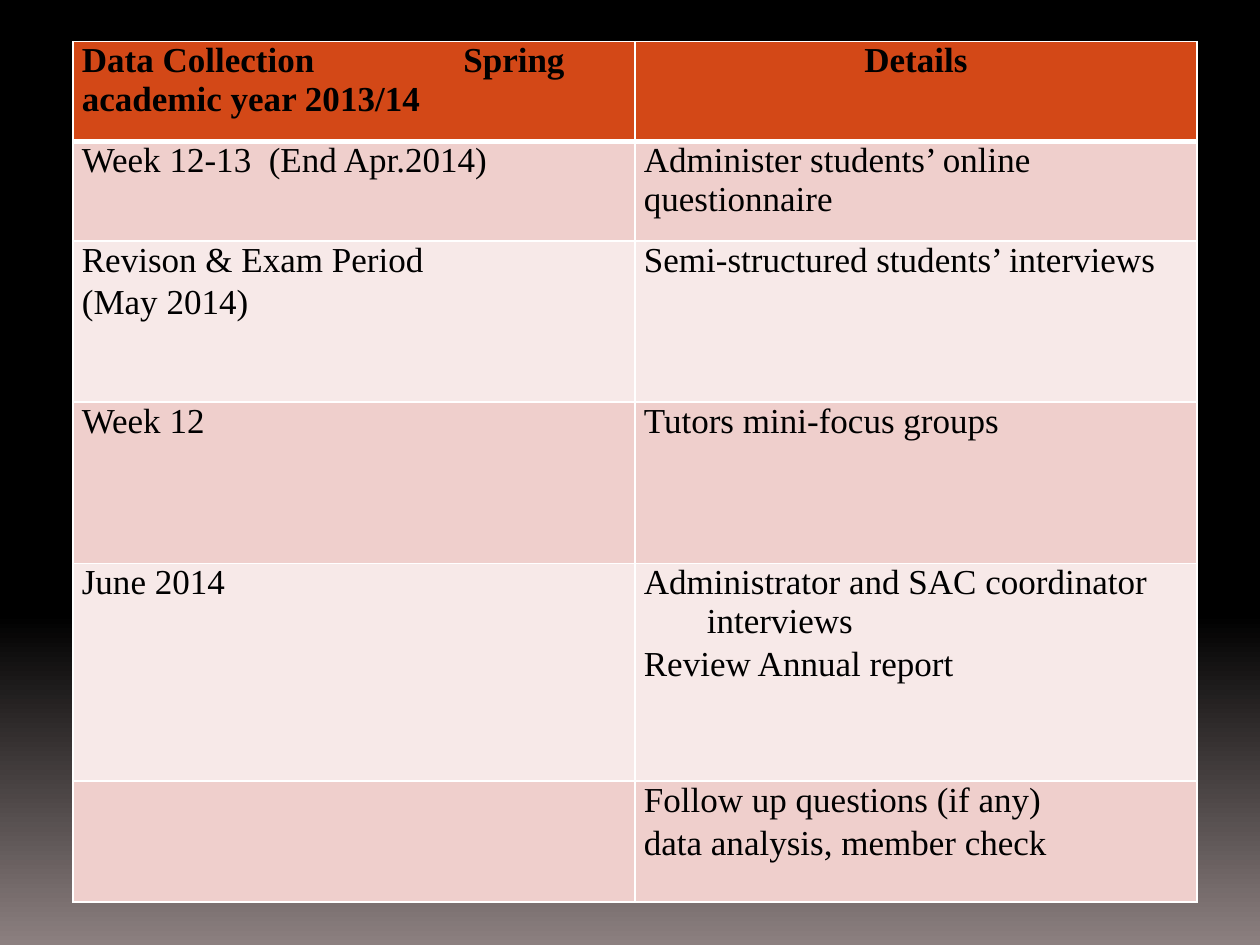
from copy import deepcopy
from dataclasses import dataclass
from lxml.etree import SubElement as Sub
from pptx import Presentation
from pptx.dml.color import RGBColor as RGB
from pptx.enum.text import PP_ALIGN as Align
from pptx.oxml.ns import qn
from pptx.util import Cm, Pt


@dataclass
class Theme:
    font: str = "Times New Roman"
    size: float = 20
    after: float = 2.1
    ink: str = "000000"
    head: str = "D34817"
    bands: tuple = ("EFCFCC", "F7E9E8")
    rule: str = "FFFFFF"
    thin: float = 1
    thick: float = 3
    back: tuple = ((0, "000000"), (0.65, "000000"), (1, "8C8080"))


theme = Theme()


def write(cell, text, bold=False, align=Align.LEFT, hang=0, tab=0):
    """Fill a cell; hang indents the first paragraph, tab sets its stop."""
    frame = cell.text_frame
    for n, line in enumerate(text.split("\n")):
        para = frame.add_paragraph() if n else frame.paragraphs[0]
        para.alignment = align
        para.space_after = Pt(theme.after)
        props = para._p.get_or_add_pPr()
        if hang and n == 0:
            props.set("marL", str(Cm(hang)))
            props.set("indent", str(-Cm(hang)))
        if tab:
            stops = Sub(props, qn("a:tabLst"))
            Sub(stops, qn("a:tab"), pos=str(Cm(tab)), algn="l")
        run = para.add_run()
        run.text = line
        font = run.font
        font.name, font.size, font.bold = theme.font, Pt(theme.size), bold
        font.color.rgb = RGB.from_string(theme.ink)


def edge(cell, side, width):
    """Draw one border of a cell."""
    line = Sub(cell._tc.get_or_add_tcPr(), qn(f"a:ln{side}"), w=str(Pt(width)))
    fill = Sub(line, qn("a:solidFill"))
    Sub(fill, qn("a:srgbClr"), val=theme.rule)


# Slide
deck = Presentation()
deck.slide_width, deck.slide_height = Cm(25.4), Cm(19.05)
slide = deck.slides.add_slide(deck.slide_layouts[6])

# Background, fading downwards
fill = slide.background.fill
fill.gradient()
fill.gradient_angle = 270
stops = next(slide._element.iter(qn("a:gsLst")))
stops.insert(0, deepcopy(stops[0]))
for stop, (place, tone) in zip(fill.gradient_stops, theme.back):
    stop.position = place
    stop.color.rgb = RGB.from_string(tone)

# Schedule: row height, period, details
rows = [
    (2.01, "Data Collection\tSpring academic year 2013/14", "Details"),
    (2.01, "Week 12-13  (End Apr.2014)",
     "Administer students’ online questionnaire"),
    (3.25, "Revison & Exam Period\n(May 2014)",
     "Semi-structured students’ interviews"),
    (3.25, "Week 12", "Tutors mini-focus groups"),
    (4.39, "June 2014",
     "Administrator and SAC coordinator interviews\nReview Annual report"),
    (2.44, "", "Follow up questions (if any)\ndata analysis, member check"),
]
styles = {
    (0, 0): dict(bold=True, tab=7.69),
    (0, 1): dict(bold=True, align=Align.CENTER),
    (4, 1): dict(hang=1.27),
}

# Table
width = 11.33
high = sum(row[0] for row in rows)
table = slide.shapes.add_table(
    len(rows), 2, Cm(1.47), Cm(0.84), Cm(2 * width), Cm(high)).table
for col in table.columns:
    col.width = Cm(width)

for r, (height, *texts) in enumerate(rows):
    table.rows[r].height = Cm(height)
    tone = theme.bands[(r - 1) % 2] if r else theme.head
    for c, text in enumerate(texts):
        cell = table.cell(r, c)
        cell.margin_left = cell.margin_right = Cm(0.18)
        cell.margin_top = cell.margin_bottom = 0
        # The rule under the heading is thicker
        for side in "LRTB":
            heavy = (r, side) in ((0, "B"), (1, "T"))
            edge(cell, side, theme.thick if heavy else theme.thin)
        cell.fill.solid()
        cell.fill.fore_color.rgb = RGB.from_string(tone)
        if text:
            write(cell, text, **styles.get((r, c), {}))

deck.save("out.pptx")
